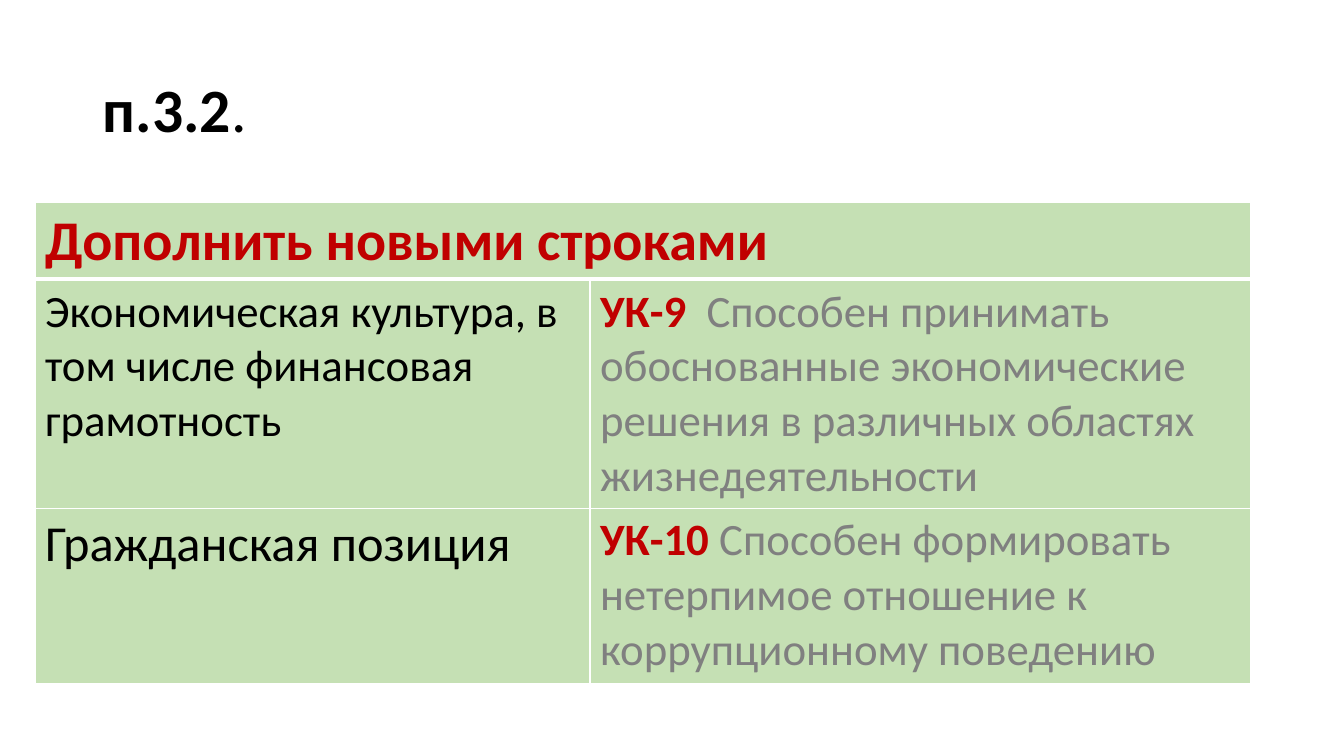
from lxml import etree
from pptx import Presentation
from pptx.dml.color import RGBColor
from pptx.enum.text import MSO_ANCHOR
from pptx.oxml.ns import qn
from pptx.util import Pt

MIDDLE = MSO_ANCHOR.MIDDLE
SCALE = 914400 / 100.8
BLACK, RED, GRAY, GREEN, WHITE = "000000", "C00000", "808080", "C5E0B4", "FFFFFF"


def px(n):
    return round(n * SCALE)


def write(frame, runs):
    """Fill the first paragraph with (text, size, colour, bold) runs."""
    para = frame.paragraphs[0]
    for text, size, color, bold in runs:
        run = para.add_run()
        run.text = text
        font = run.font
        font.name, font.size, font.bold = "Calibri", Pt(size), bold
        font.color.rgb = RGBColor.from_string(color)
    return para


deck = Presentation()
deck.slide_width, deck.slide_height = px(1344), px(756)
slide = deck.slides.add_slide(deck.slide_layouts[6])

# Title
title = slide.shapes.add_textbox(px(93), px(40), px(1159), px(146)).text_frame
title.word_wrap = True
title.vertical_anchor = MIDDLE
head = write(title, [("п.3.2", 44, BLACK, True), (".", 44, BLACK, False)])
head.line_spacing = 0.9

# Table of new rows
widths = [555, 661]
heights = [77, 229, 175]
rows = [
    [[("Дополнить новыми строками", 40, RED, True)], []],
    [
        [("Экономическая культура, в том числе финансовая грамотность", 32, BLACK, False)],
        [
            ("УК-9", 32, RED, True),
            ("  Способен принимать обоснованные экономические решения "
             "в различных областях жизнедеятельности", 32, GRAY, False),
        ],
    ],
    [
        [("Гражданская позиция", 36, BLACK, False)],
        [
            ("УК-10 ", 32, RED, True),
            ("Способен формировать нетерпимое отношение "
             "к коррупционному поведению", 32, GRAY, False),
        ],
    ],
]
table = slide.shapes.add_table(
    len(rows), len(widths), px(35), px(202), px(sum(widths)), px(sum(heights))
).table
for col, width in zip(table.columns, widths):
    col.width = px(width)
for row, height in zip(table.rows, heights):
    row.height = px(height)
table.cell(0, 0).merge(table.cell(0, 1))

for r, line in enumerate(rows):
    for c, runs in enumerate(line):
        cell = table.cell(r, c)
        write(cell.text_frame, runs)
        cell.fill.solid()
        cell.fill.fore_color.rgb = RGBColor.from_string(GREEN)
        # Borders come before the fill in the cell properties
        props = cell._tc.get_or_add_tcPr()
        for i, side in enumerate(["lnL", "lnR", "lnT", "lnB"]):
            thick = (r, side) in [(0, "lnB"), (1, "lnT")]
            edge = etree.Element(qn("a:" + side), w=str(Pt(3 if thick else 1)))
            paint = etree.SubElement(edge, qn("a:solidFill"))
            etree.SubElement(paint, qn("a:srgbClr"), val=WHITE)
            props.insert(i, edge)

deck.save("out.pptx")
